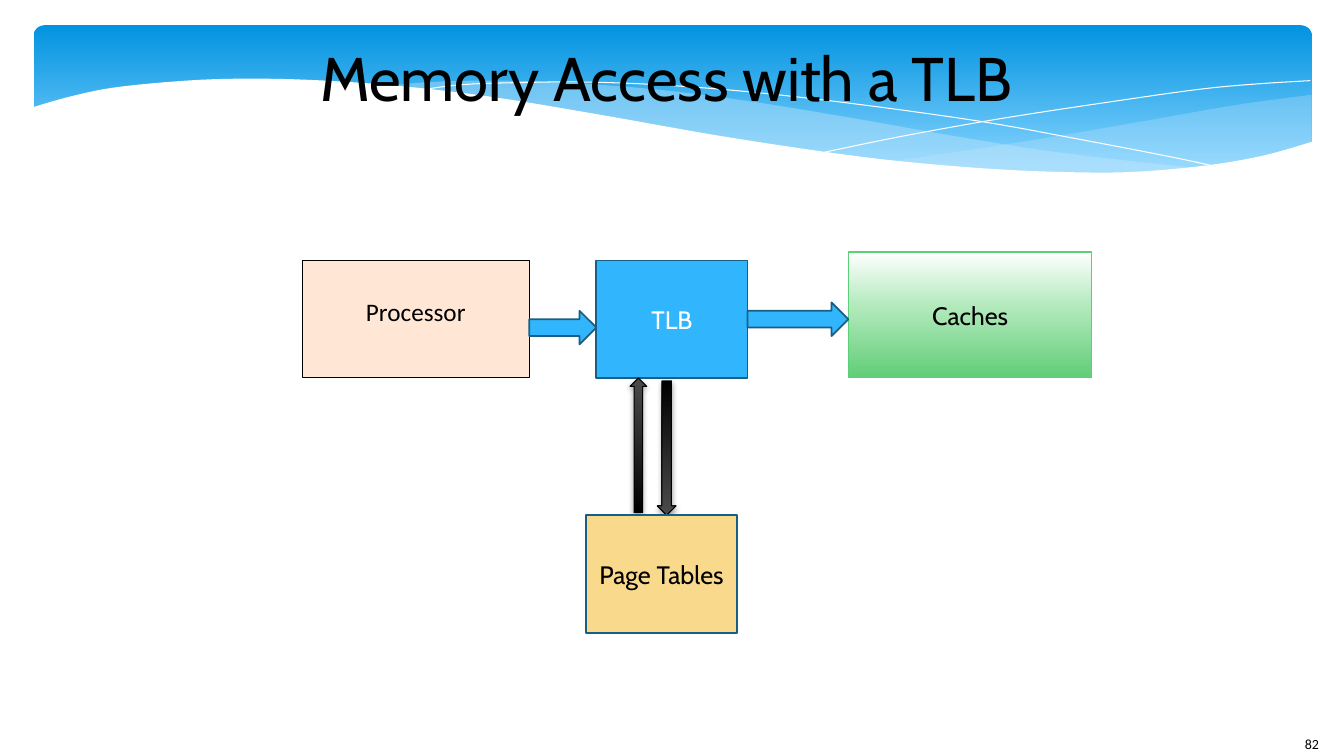
from lxml.etree import SubElement
from pptx import Presentation
from pptx.dml.color import RGBColor
from pptx.enum.shapes import MSO_SHAPE as Shape
from pptx.enum.text import MSO_ANCHOR as Anchor, MSO_AUTO_SIZE as AutoSize, PP_ALIGN as Align
from pptx.oxml.ns import qn
from pptx.util import Pt

COLORS = {
    "black": "000000", "white": "FFFFFF", "charcoal": "4B4B4B",
    "band_top": "0293E0", "band_bottom": "83D3FE", "veil": "C6E7FC",
    "peach": "FFE6D5", "blue": "31B6FD", "navy": "195F84", "sand": "F9D98C",
    "mint": "B1E9BB", "green": "61CD78", "green_edge": "5BD078",
}

# Knots in points, measured from the top left corner of the band
WHITE_EDGE = [(914, 83), (879, 93), (839, 100), (792.5, 104.4), (752, 105.2), (690, 103),
              (617.5, 97), (555, 89), (484, 78), (405, 64), (326, 51), (257, 43), (196, 39),
              (145, 38.2), (103, 40), (57, 44.6), (26, 51), (-2, 59)]
RIGHT_VEIL_TOP = [(913, 49.7), (859, 57), (802, 67), (723, 80.6), (653.5, 91.4), (611, 97.2)]
RIGHT_VEIL_BOTTOM = [(611, 97.2), (653, 101), (702.5, 104.4), (757, 106), (805, 104.4),
                     (845, 99.4), (881, 93), (913, 84.2)]
MIDDLE_VEIL_TOP = [(833, 102.2), (779.5, 96.5), (720.5, 89.3), (653.5, 78.5), (580, 65.5),
                   (509, 54), (445.4, 46), (379, 41), (323, 39.6), (277, 41), (251, 44)]
MIDDLE_VEIL_BOTTOM = [(251, 44), (324, 51.8), (407, 65.5), (484, 79.2), (553.4, 90),
                      (629, 99.4), (694.6, 104.4), (751, 106.6), (790, 105.8), (833, 102.2)]
FALLING_LINE = [(272.6, 46.8), (306, 42.5), (347.5, 41), (391.4, 40.6), (445.4, 42.5),
                (510, 47.5), (586.6, 56.2), (674.4, 68.4), (739, 80), (810, 93.6), (847, 101.5)]
RISING_LINE = [(565, 90.7), (621, 79.2), (694, 66.2), (779, 53.3), (836, 45.4),
               (876, 41.8), (912, 39.6)]


def rgb(name):
    return RGBColor.from_string(COLORS[name])


def paint(shape, fill=None, line=None, width=0):
    """Fill with a colour name or a list of (percent, colour name) stops running downwards."""
    shape.shadow.inherit = False
    if isinstance(fill, list):
        shape.fill.gradient()
        shape.fill.gradient_angle = 270
        stops = shape.element.spPr.find(".//" + qn("a:gsLst"))
        for stop in list(stops):
            stops.remove(stop)
        for percent, name in fill:
            stop = SubElement(stops, qn("a:gs"), pos=str(percent * 1000))
            SubElement(stop, qn("a:srgbClr"), val=COLORS[name])
    elif fill:
        shape.fill.solid()
        shape.fill.fore_color.rgb = rgb(fill)
    else:
        shape.fill.background()
    if line:
        shape.line.color.rgb = rgb(line)
        shape.line.width = Pt(width)
    else:
        shape.line.fill.background()


def add_alpha(color, percent):
    SubElement(color, qn("a:alpha"), val=str(percent * 1000))


def drop_shadow(shape):
    effects = shape.element.spPr.find(qn("a:effectLst"))
    shadow = SubElement(effects, qn("a:outerShdw"), blurRad=str(Pt(4)), dist=str(Pt(2)),
                        dir="5400000", rotWithShape="0")
    add_alpha(SubElement(shadow, qn("a:srgbClr"), val=COLORS["black"]), 38)


def write(frame, text, size, font, color="black", align=Align.CENTER):
    paragraph = frame.paragraphs[0]
    paragraph.alignment = align
    run = paragraph.add_run()
    run.text = text
    run.font.size = Pt(size)
    run.font.name = font
    run.font.color.rgb = rgb(color)


def smooth(knots, steps=5):
    """Catmull-Rom curve through the knots."""
    padded = [knots[0], *knots, knots[-1]]
    curve = [knots[0]]
    for a, b, c, d in zip(padded, padded[1:], padded[2:], padded[3:]):
        for step in range(1, steps + 1):
            t = step / steps
            curve.append(tuple(
                q + t / 2 * (r - p + t * (2 * p - 5 * q + 4 * r - s + t * (3 * (q - r) + s - p)))
                for p, q, r, s in zip(a, b, c, d)))
    return curve


def add_wave_band(slide, left, top, width, height):
    def add_outline(points, close=True):
        start, *rest = [(Pt(left + x), Pt(top + y)) for x, y in points]
        builder = slide.shapes.build_freeform(*start)
        builder.add_line_segments(rest, close=close)
        return builder.convert_to_shape()

    band = slide.shapes.add_shape(Shape.ROUNDED_RECTANGLE, Pt(left), Pt(top), Pt(width), Pt(height))
    band.adjustments[0] = 0.07
    paint(band, [(0, "band_top"), (90, "band_bottom")])

    for upper, lower, opacity in [(RIGHT_VEIL_TOP, RIGHT_VEIL_BOTTOM, 29),
                                  (MIDDLE_VEIL_TOP, MIDDLE_VEIL_BOTTOM, 40)]:
        veil = add_outline(smooth(upper) + smooth(lower))
        paint(veil, "veil")
        add_alpha(veil.element.spPr.find(qn("a:solidFill"))[0], opacity)

    for knots in (FALLING_LINE, RISING_LINE):
        paint(add_outline(smooth(knots), close=False), line="white")

    cover = add_outline(smooth(WHITE_EDGE) + [(-2, height + 31), (width + 1, height + 31)])
    paint(cover, "white")


def place_title(slide, left, top, width, height):
    title = slide.shapes.title
    title.left, title.top, title.width, title.height = map(Pt, (left, top, width, height))
    frame = title.text_frame
    frame.margin_left = frame.margin_right = frame.margin_top = frame.margin_bottom = 0
    frame.vertical_anchor = Anchor.MIDDLE
    frame.word_wrap = True
    frame.auto_size = AutoSize.NONE
    write(frame, "Memory Access with a TLB", 44, "Cabin")
    slide.shapes.element.append(title.element)  # in front of the band


def add_page_number(slide, left, top, width, height):
    number = slide.shapes.add_textbox(Pt(left), Pt(top), Pt(width), Pt(height))
    number.text_frame.word_wrap = True
    write(number.text_frame, "82", 10, "Calibri", align=Align.LEFT)


def add_tlb_diagram(slide, left, top):
    def add_part(kind, x, y, width, height, *look):
        part = slide.shapes.add_shape(kind, Pt(left + x), Pt(top + y), Pt(width), Pt(height))
        paint(part, *look)
        return part

    def add_unit(text, x, y, width, height, *look, font="Cabin", color="black"):
        frame = add_part(Shape.RECTANGLE, x, y, width, height, *look).text_frame
        frame.word_wrap = True
        frame.vertical_anchor = Anchor.MIDDLE
        write(frame, text, 18, font, color)
        return frame

    processor = add_unit("Processor", 0, 6, 162, 84, "peach", "black", font="Calibri")
    processor.vertical_anchor = Anchor.TOP
    processor.margin_top = Pt(25.6)
    add_unit("TLB", 210, 6, 108, 84, "blue", "navy", 1.25, color="white")
    add_unit("Caches", 390, 0, 174, 90, [(0, "white"), (44, "mint"), (100, "green")],
             "green_edge", 0.75)

    for x, y, width in [(162, 42, 48), (318, 36, 72)]:
        add_part(Shape.RIGHT_ARROW, x, y, width, 24, "blue", "navy", 1.25)
    for kind, x, y, width, upper, lower in [
            (Shape.UP_ARROW, 234, 90, 12, "charcoal", "black"),
            (Shape.DOWN_ARROW, 253.5, 92, 13.5, "black", "charcoal")]:
        drop_shadow(add_part(kind, x, y, width, 96, [(0, upper), (100, lower)], "black", 0.75))

    add_unit("Page Tables", 202.5, 188, 108, 84, "sand", "navy", 1.25)


def main():
    deck = Presentation()
    deck.slide_width, deck.slide_height = Pt(960), Pt(540)
    slide = deck.slides.add_slide(deck.slide_layouts[5])
    add_wave_band(slide, 24, 18, 913, 112)
    add_page_number(slide, 925, 522, 34, 18)
    place_title(slide, 184, 18, 584, 73.5)
    add_tlb_diagram(slide, 216, 180)
    deck.save("out.pptx")


if __name__ == "__main__":
    main()
